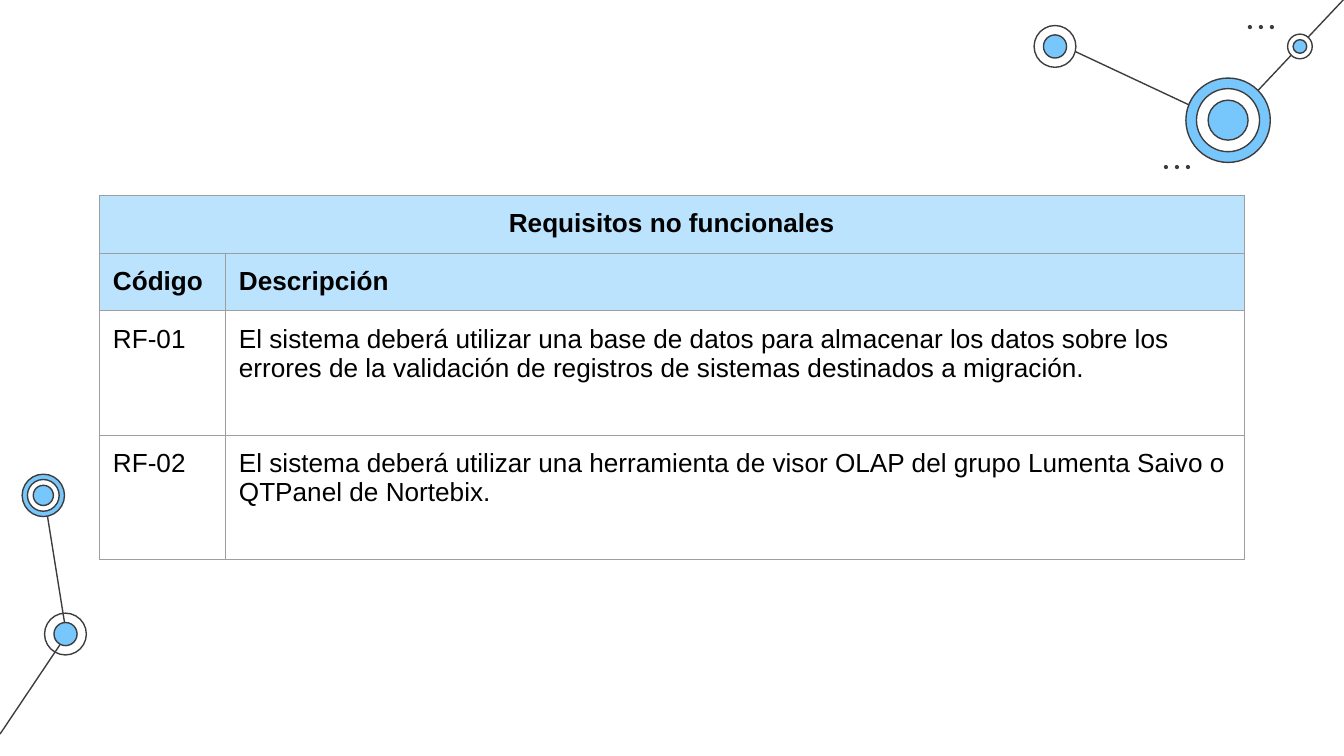
from lxml import etree
from pptx import Presentation
from pptx.dml.color import RGBColor
from pptx.enum import shapes, text
from pptx.oxml import ns
from pptx.util import Pt

INK = RGBColor(0x3D, 0x3D, 0x3D)
BLUE = RGBColor(0x77, 0xC6, 0xFC)
PALE_BLUE = RGBColor(0xBB, 0xE3, 0xFE)
WHITE = RGBColor(0xFF, 0xFF, 0xFF)
BLACK = RGBColor(0, 0, 0)
BORDER = RGBColor(0x9E, 0x9E, 0x9E)

TABLE_ROWS = [
    ("Requisitos no funcionales", ""),
    ("Código", "Descripción"),
    ("RF-01", "El sistema deberá utilizar una base de datos para almacenar los datos "
              "sobre los errores de la validación de registros de sistemas destinados a migración."),
    ("RF-02", "El sistema deberá utilizar una herramienta de visor OLAP del grupo "
              "Lumenta Saivo o QTPanel de Nortebix."),
]
HEADER_ROWS = 2
TABLE_LEFT, TABLE_TOP = 53.3, 104.7
COLUMN_WIDTHS = (67.5, 545.8)
ROW_HEIGHTS = (30.9, 30.9, 66.7, 66.7)
CELL_MARGIN = 7.2
LINE_WIDTH = 0.75

LINKS = [
    ((35.6, 339.8), (23.5, 264.5)),
    ((0, 393.3), (35.1, 341)),
    ((657.9, 66), (566.8, 23.3)),
    ((720, -0.5), (657.9, 65.5)),
]
NODES = [
    ((35.1, 339.7), [(22.4, None), (12.4, BLUE)]),
    ((23.2, 265.4), [(22.7, BLUE), (17, WHITE), (10.8, BLUE)]),
    ((657.9, 64.4), [(45.2, BLUE), (33.8, WHITE), (21.4, BLUE)]),
    ((565.2, 24.9), [(22.4, WHITE), (12.4, BLUE)]),
    ((696.4, 24.9), [(13.2, WHITE), (7.3, BLUE)]),
]
DOT_ROWS = [(669.6, 14.5), (624.6, 89.5)]
DOT_COUNT, DOT_STEP, DOT_SIZE = 3, 5.9, 2.2


def add_circle(slide, center, diameter, fill, outlined=True):
    x, y = center
    circle = slide.shapes.add_shape(
        shapes.MSO_SHAPE.OVAL, Pt(x - diameter / 2), Pt(y - diameter / 2),
        Pt(diameter), Pt(diameter))
    circle.shadow.inherit = False
    if fill is None:
        circle.fill.background()
    else:
        circle.fill.solid()
        circle.fill.fore_color.rgb = fill
    if outlined:
        circle.line.color.rgb = INK
        circle.line.width = Pt(LINE_WIDTH)
    else:
        circle.line.fill.background()


def add_link(slide, start, end):
    link = slide.shapes.add_connector(
        shapes.MSO_CONNECTOR.STRAIGHT, *(Pt(value) for value in start + end))
    link.line.color.rgb = INK
    link.line.width = Pt(LINE_WIDTH)
    etree.SubElement(link._element.spPr, ns.qn("a:effectLst"))


def add_borders(cell):
    properties = cell._tc.get_or_add_tcPr()
    for index, side in enumerate(("lnL", "lnR", "lnT", "lnB")):
        line = etree.Element(ns.qn(f"a:{side}"), w=str(Pt(LINE_WIDTH)))
        fill = etree.SubElement(line, ns.qn("a:solidFill"))
        etree.SubElement(fill, ns.qn("a:srgbClr"), val=str(BORDER))
        properties.insert(index, line)


def format_cell(cell, content, header):
    cell.margin_left = cell.margin_right = Pt(CELL_MARGIN)
    cell.margin_top = cell.margin_bottom = Pt(CELL_MARGIN)
    if header:
        cell.fill.solid()
        cell.fill.fore_color.rgb = PALE_BLUE
    else:
        cell.fill.background()
    add_borders(cell)
    cell.text_frame.text = content
    for run in cell.text_frame.paragraphs[0].runs:
        run.font.name = "Arial"
        run.font.size = Pt(14)
        run.font.bold = header
        run.font.color.rgb = BLACK


def add_requirements(slide):
    table = slide.shapes.add_table(
        len(TABLE_ROWS), len(COLUMN_WIDTHS), Pt(TABLE_LEFT), Pt(TABLE_TOP),
        Pt(sum(COLUMN_WIDTHS)), Pt(sum(ROW_HEIGHTS))).table
    table.first_row = table.horz_banding = False
    for column, width in zip(table.columns, COLUMN_WIDTHS):
        column.width = Pt(width)
    for row, height in zip(table.rows, ROW_HEIGHTS):
        row.height = Pt(height)
    for row_index, contents in enumerate(TABLE_ROWS):
        for column_index, content in enumerate(contents):
            format_cell(table.cell(row_index, column_index), content, row_index < HEADER_ROWS)
    heading = table.cell(0, 0)
    heading.merge(table.cell(0, 1))
    heading.text_frame.paragraphs[0].alignment = text.PP_ALIGN.CENTER


def main():
    presentation = Presentation()
    presentation.slide_width, presentation.slide_height = Pt(720), Pt(405)
    slide = presentation.slides.add_slide(presentation.slide_layouts[6])
    for start, end in LINKS:
        add_link(slide, start, end)
    for center, rings in NODES:
        for diameter, fill in rings:
            add_circle(slide, center, diameter, fill)
    for x, y in DOT_ROWS:
        for index in range(DOT_COUNT):
            add_circle(slide, (x + index * DOT_STEP, y), DOT_SIZE, INK, outlined=False)
    add_requirements(slide)
    presentation.save("out.pptx")


if __name__ == "__main__":
    main()
